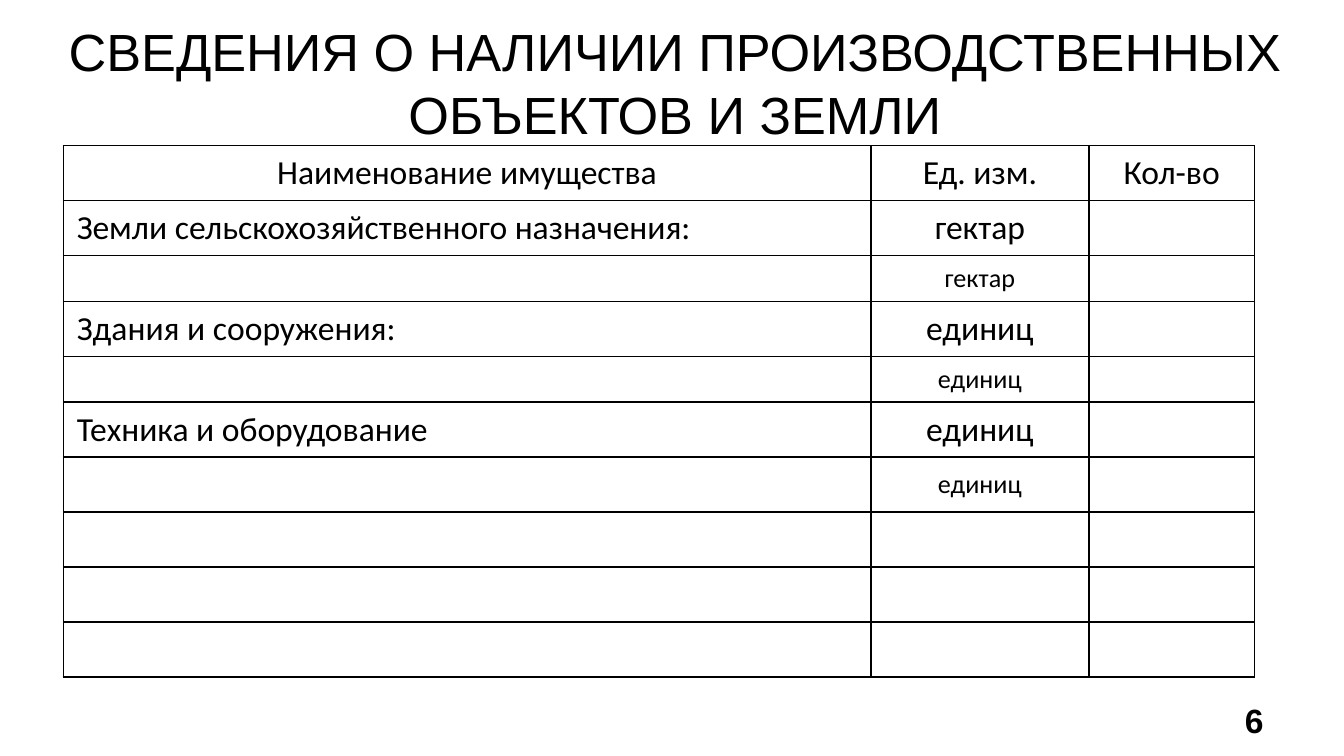
from lxml import etree
from pptx import Presentation
from pptx import util as u
from pptx.dml import color
from pptx.enum import text
from pptx.oxml import ns

COLORS = {"ink": "000000", "paper": "FFFFFF"}
ALIGN = text.PP_ALIGN
HEADER = ("Наименование имущества", "Ед. изм.", "Кол-во")
PROPERTY = [
    ("Земли сельскохозяйственного назначения:", "гектар", ALIGN.JUSTIFY),
    ("Здания и сооружения:", "единиц", ALIGN.JUSTIFY),
    ("Техника и оборудование", "единиц", ALIGN.LEFT),
]
COLUMN_WIDTHS = (432.5, 117, 88.5)
ROW_HEIGHT, DETAIL_HEIGHT = 29.5, 24.5
SPARE_ROWS = 3


def rgb(name):
    return color.RGBColor.from_string(COLORS[name])


def write(frame, words, size, font, align, bold=False):
    line = frame.paragraphs[0]
    line.text = words
    line.alignment = align
    line.font.size = u.Pt(size)
    line.font.name = font
    line.font.bold = bold
    line.font.color.rgb = rgb("ink")


def add_label(slide, box, words, size, align, bold=False):
    frame = slide.shapes.add_textbox(*map(u.Pt, box)).text_frame
    frame.word_wrap = True
    frame.vertical_anchor = text.MSO_ANCHOR.MIDDLE
    write(frame, words, size, "Arial", align, bold)


def add_borders(cell):
    properties = cell._tc.get_or_add_tcPr()
    for position, side in enumerate(("lnL", "lnR", "lnT", "lnB")):
        border = etree.Element(ns.qn(f"a:{side}"), w=str(u.Pt(1)))
        fill = etree.SubElement(border, ns.qn("a:solidFill"))
        etree.SubElement(fill, ns.qn("a:srgbClr"), val=COLORS["ink"])
        properties.insert(position, border)


def fill_cell(cell, words, size, align):
    cell.fill.solid()
    cell.fill.fore_color.rgb = rgb("paper")
    cell.vertical_anchor = text.MSO_ANCHOR.MIDDLE
    if not words:
        cell.margin_top = cell.margin_bottom = 0
    write(cell.text_frame, words, size, "Calibri", align)
    add_borders(cell)


def property_rows():
    rows = [(HEADER, 18, ALIGN.CENTER, ROW_HEIGHT)]
    for name, unit, align in PROPERTY:
        rows.append(((name, unit, ""), 18, align, ROW_HEIGHT))
        rows.append((("", unit, ""), 14, align, DETAIL_HEIGHT))
    rows[-1] = (*rows[-1][:3], ROW_HEIGHT)
    return rows + [(("", "", ""), 18, ALIGN.LEFT, ROW_HEIGHT)] * SPARE_ROWS


def add_property_table(slide, left, top):
    rows = property_rows()
    width, height = sum(COLUMN_WIDTHS), sum(row[3] for row in rows)
    table = slide.shapes.add_table(
        len(rows), len(COLUMN_WIDTHS), *map(u.Pt, (left, top, width, height))
    ).table
    table.first_row = table.horz_banding = False
    for column, column_width in zip(table.columns, COLUMN_WIDTHS):
        column.width = u.Pt(column_width)
    for row, (values, size, name_align, row_height) in zip(table.rows, rows):
        row.height = u.Pt(row_height)
        aligns = (name_align, ALIGN.CENTER, ALIGN.CENTER)
        for cell, words, align in zip(row.cells, values, aligns):
            fill_cell(cell, words, size, align)


def main():
    deck = Presentation()
    deck.slide_width, deck.slide_height = u.Pt(720), u.Pt(405)
    slide = deck.slides.add_slide(deck.slide_layouts[6])
    add_label(slide, (516, 375, 168, 22), "6", 18, ALIGN.RIGHT, bold=True)
    add_label(slide, (1.5, 24.5, 720, 39),
              "СВЕДЕНИЯ О НАЛИЧИИ ПРОИЗВОДСТВЕННЫХ ОБЪЕКТОВ И ЗЕМЛИ", 28, ALIGN.CENTER)
    add_property_table(slide, 34, 78)
    deck.save("out.pptx")


if __name__ == "__main__":
    main()
